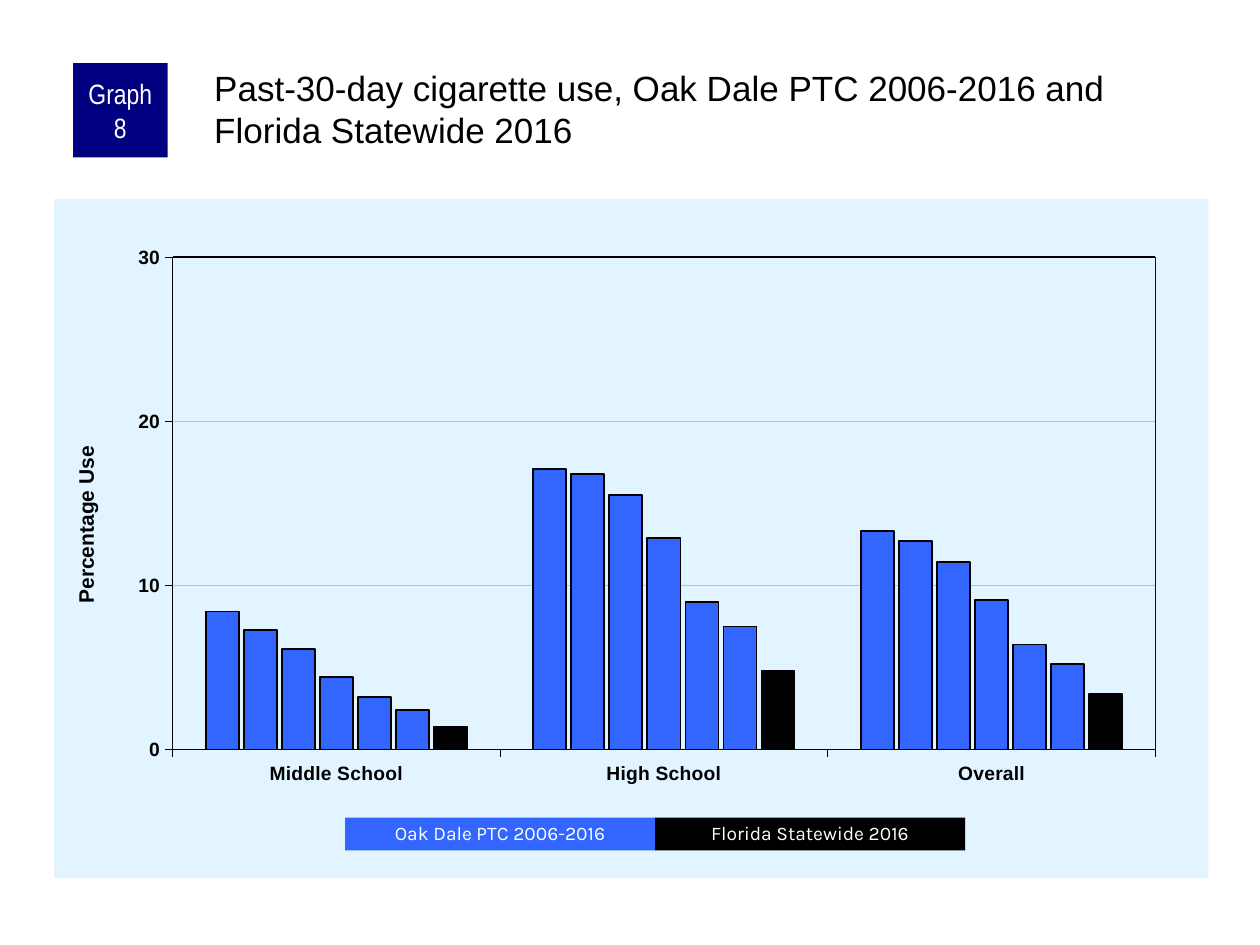
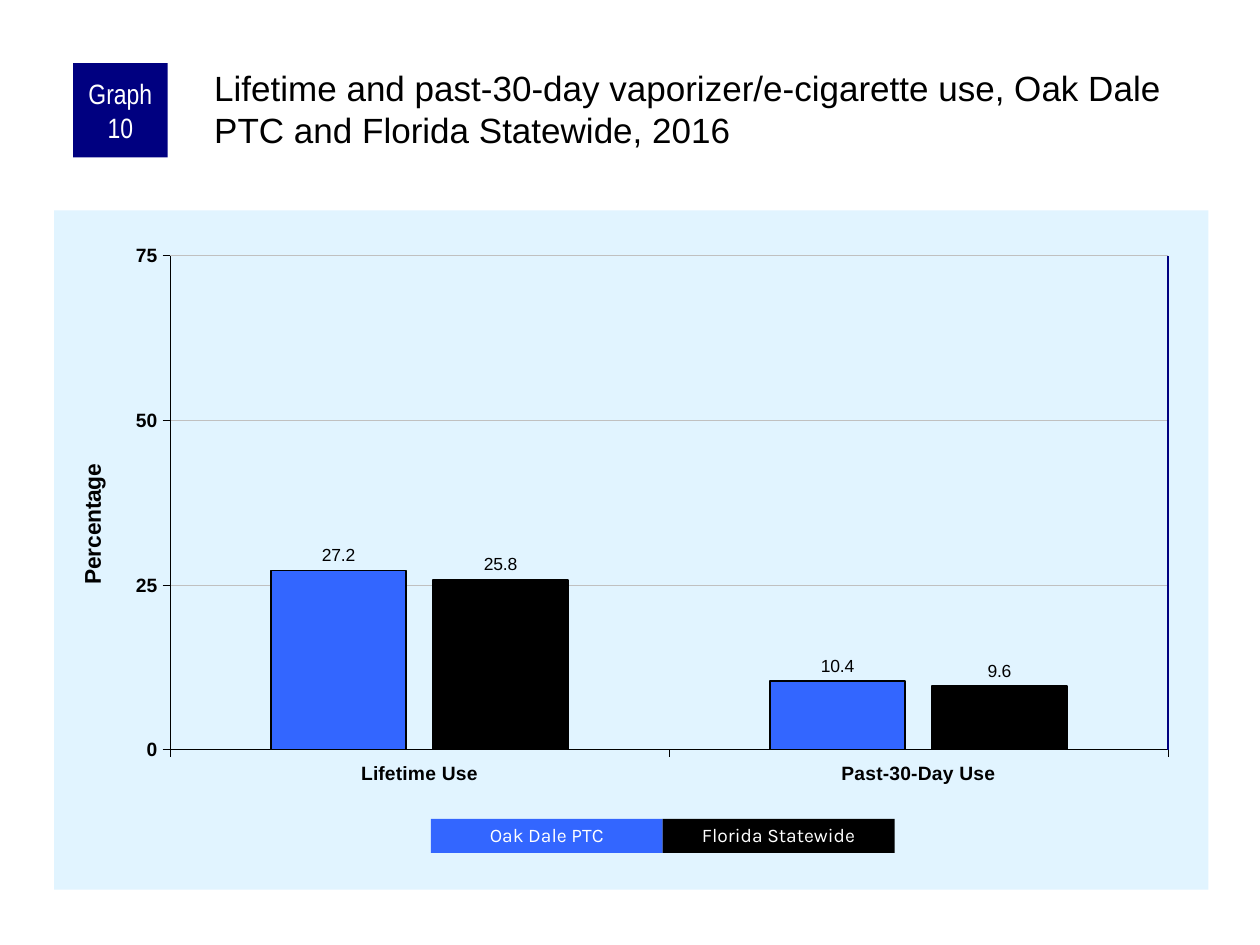
import pptx
import pptx.chart.data
import pptx.dml.color
import pptx.enum.chart
import pptx.enum.shapes
import pptx.enum.text
import pptx.oxml
import pptx.oxml.ns
import pptx.util
from pptx.util import Inches

NAVY, BLUE, BLACK, WHITE = "000080", "3366FF", "000000", "FFFFFF"
PANEL, GRID = "E1F4FF", "C0C0C0"
CHART_LEFT, CHART_WIDTH, CHART_HEIGHT = 0.43, 9.16, 5.39
REGION = "Oak Dale PTC"

GRAPHS = [
    {
        "badge": "Graph 8",
        "title": f"Past-30-day cigarette use, {REGION} 2006-2016 and Florida Statewide 2016",
        "top": 1.58,
        "plot": (1.37, 2.04, 7.8, 3.91),
        "edges": {"left": BLACK, "top": BLACK, "right": NAVY},
        "axis_title": ("Percentage Use", 12, 0.55, 3.51),
        "scale": (30, 10),
        "gap": 200,
        "overlap": -15,
        "labels": False,
        "categories": ["Middle School", "High School", "Overall"],
        "series": [
            (8.4, 17.1, 13.3), (7.3, 16.8, 12.7), (6.1, 15.5, 11.4),
            (4.4, 12.9, 9.1), (3.2, 9, 6.4), (2.4, 7.5, 5.2), (1.4, 4.8, 3.4),
        ],
        "legend": (2.74, 6.49, 2.46, 0.26),
        "legend_names": [f"{REGION} 2006-2016", "Florida Statewide 2016"],
    },
    {
        "badge": "Graph 10",
        "title": f"Lifetime and past-30-day vaporizer/e-cigarette use, {REGION} and Florida Statewide, 2016",
        "top": 1.67,
        "plot": (1.35, 2.03, 7.92, 3.92),
        "edges": {"right": NAVY},
        "axis_title": ("Percentage", 13, 0.59, 3.65),
        "scale": (75, 25),
        "gap": 150,
        "overlap": -20,
        "labels": True,
        "categories": ["Lifetime Use", "Past-30-Day Use"],
        "series": [(27.2, 10.4), (25.8, 9.6)],
        "legend": (3.42, 6.5, 1.84, 0.27),
        "legend_names": [REGION, "Florida Statewide"],
    },
]


def rgb(value):
    return pptx.dml.color.RGBColor.from_string(value)


def xml(text):
    ns = pptx.oxml.ns.nsdecls("c", "a")
    tag, rest = text.split(">", 1)
    if tag.endswith("/"):
        return pptx.oxml.parse_xml(f"{tag[:-1]} {ns}/>")
    return pptx.oxml.parse_xml(f"{tag} {ns}>{rest}")


def style_font(font, size, color=BLACK, name="Arial", bold=False):
    values = {"size": pptx.util.Pt(size), "name": name, "bold": bold}
    for key, value in values.items():
        setattr(font, key, value)
    font.color.rgb = rgb(color)


def style_line(line, color, width):
    line.color.rgb = rgb(color)
    line.width = pptx.util.Pt(width)


def style_frame(tf, margins, anchor):
    values = dict(zip(("margin_left", "margin_top", "margin_right", "margin_bottom"),
                      map(Inches, margins)))
    values.update(word_wrap=True, vertical_anchor=anchor,
                  auto_size=pptx.enum.text.MSO_AUTO_SIZE.NONE)
    for key, value in values.items():
        setattr(tf, key, value)


def add_title(s, text):
    sp = s.shapes.title
    box = {"left": 1.67, "top": 0.5, "width": 7.92, "height": 0.83}
    for key, value in box.items():
        setattr(sp, key, Inches(value))
    style_frame(sp.text_frame, (0.03, 0.03, 0, 0), pptx.enum.text.MSO_ANCHOR.TOP)
    p = sp.text_frame.paragraphs[0]
    p.alignment = pptx.enum.text.PP_ALIGN.LEFT
    r = p.add_run()
    r.text = text
    style_font(r.font, 20)


def add_box(s, box, text, fill, size, name, margins, spacing=1.0):
    sp = s.shapes.add_shape(pptx.enum.shapes.MSO_SHAPE.RECTANGLE, *map(Inches, box))
    sp.shadow.inherit = False
    sp.fill.solid()
    sp.fill.fore_color.rgb = rgb(fill)
    sp.line.fill.background()
    style_frame(sp.text_frame, margins, pptx.enum.text.MSO_ANCHOR.MIDDLE)
    p = sp.text_frame.paragraphs[0]
    p.alignment = pptx.enum.text.PP_ALIGN.CENTER
    p.line_spacing = spacing
    r = p.add_run()
    r.text = text
    style_font(r.font, size, WHITE, name)


def add_legend(s, box, names):
    left, top, width, height = box
    for i, (name, color) in enumerate(zip(names, (BLUE, BLACK))):
        add_box(s, (left + i * width, top, width, height), name, color,
                11, "Karla", (0.1, 0.05, 0.1, 0.05), 0.9)


def set_layout(parent, after, chart_top, x, y, w=None, h=None):
    old = parent.find(pptx.oxml.ns.qn("c:layout"))
    if old is not None:
        parent.remove(old)
    target = '<c:layoutTarget val="inner"/>' if w else ""
    size = (f'<c:w val="{w / CHART_WIDTH}"/><c:h val="{h / CHART_HEIGHT}"/>'
            if w else "")
    layout = xml('<c:layout><c:manualLayout>' + target
                 + '<c:xMode val="edge"/><c:yMode val="edge"/>'
                 + f'<c:x val="{(x - CHART_LEFT) / CHART_WIDTH}"/>'
                 + f'<c:y val="{(y - chart_top) / CHART_HEIGHT}"/>' + size
                 + '</c:manualLayout></c:layout>')
    if after is None:
        parent.insert(0, layout)
    else:
        after.addnext(layout)


def style_axes(chart, graph):
    for axis in (chart.category_axis, chart.value_axis):
        axis.major_tick_mark = pptx.enum.chart.XL_TICK_MARK.OUTSIDE
        axis.minor_tick_mark = pptx.enum.chart.XL_TICK_MARK.NONE
        style_font(axis.tick_labels.font, 11, bold=True)
        style_line(axis.format.line, BLACK, 0.25)
    axis = chart.value_axis
    maximum, step = graph["scale"]
    values = {"minimum_scale": 0, "maximum_scale": maximum, "major_unit": step,
              "has_major_gridlines": True, "has_title": True}
    for key, value in values.items():
        setattr(axis, key, value)
    axis.tick_labels.number_format = "0"
    axis.tick_labels.number_format_is_linked = False
    style_line(axis.major_gridlines.format.line, GRID, 0.25)
    text, size, x, y = graph["axis_title"]
    tf = axis.axis_title.text_frame
    r = tf.paragraphs[0].add_run()
    r.text = text
    style_font(r.font, size, bold=True)
    tf._txBody.bodyPr.set("rot", "-5400000")
    tf._txBody.bodyPr.set("vert", "horz")
    title = axis.axis_title._element
    set_layout(title, title.find(pptx.oxml.ns.qn("c:tx")), graph["top"], x, y)


def style_series(plot, labels):
    series = list(plot.series)
    for ser in series:
        ser.format.fill.solid()
        ser.format.fill.fore_color.rgb = rgb(BLACK if ser is series[-1] else BLUE)
        style_line(ser.format.line, BLACK, 1)
        ser.invert_if_negative = False
    if labels:
        plot.has_data_labels = True
        values = {"show_value": True, "number_format": "0.0",
                  "number_format_is_linked": False,
                  "position": pptx.enum.chart.XL_LABEL_POSITION.OUTSIDE_END}
        for key, value in values.items():
            setattr(plot.data_labels, key, value)
        style_font(plot.data_labels.font, 10)


def add_column_chart(s, graph):
    data = pptx.chart.data.CategoryChartData()
    data.categories = graph["categories"]
    for i, values in enumerate(graph["series"], 1):
        data.add_series(f"Series {i}", values)
    box = (CHART_LEFT, graph["top"], CHART_WIDTH, CHART_HEIGHT)
    chart = s.shapes.add_chart(pptx.enum.chart.XL_CHART_TYPE.COLUMN_CLUSTERED,
                               *map(Inches, box), data).chart
    chart.has_legend = False
    chart.has_title = False
    style_font(chart.font, 11)
    plot = chart.plots[0]
    plot.gap_width = graph["gap"]
    plot.overlap = graph["overlap"]
    plot.vary_by_categories = False
    style_series(plot, graph["labels"])
    style_axes(chart, graph)
    space = chart._chartSpace
    set_layout(space.chart.plotArea, None, graph["top"], *graph["plot"])
    space.chart.addnext(xml(
        f'<c:spPr><a:solidFill><a:srgbClr val="{PANEL}"/></a:solidFill>'
        '<a:ln><a:noFill/></a:ln></c:spPr>'))


def add_plot_edges(s, graph):
    left, top, width, height = graph["plot"]
    right, bottom = left + width, top + height
    ends = {"left": (left, top, left, bottom), "top": (left, top, right, top),
            "right": (right, top, right, bottom)}
    for side, color in graph["edges"].items():
        line = s.shapes.add_connector(pptx.enum.shapes.MSO_CONNECTOR.STRAIGHT,
                                      *map(Inches, ends[side]))
        style_line(line.line, color, 1)
        line._element.spPr.append(xml("<a:effectLst/>"))


def add_graph_slide(prs, graph):
    s = prs.slides.add_slide(prs.slide_layouts[5])
    add_title(s, graph["title"])
    add_column_chart(s, graph)
    add_plot_edges(s, graph)
    add_box(s, (0.58, 0.5, 0.75, 0.75), graph["badge"], NAVY,
            16, "Arial Narrow", (0.05, 0, 0.05, 0))
    add_legend(s, graph["legend"], graph["legend_names"])


def main():
    prs = pptx.Presentation()
    prs.slide_width, prs.slide_height = Inches(10), Inches(7.5)
    for graph in GRAPHS:
        add_graph_slide(prs, graph)
    prs.save("out.pptx")


if __name__ == "__main__":
    main()
